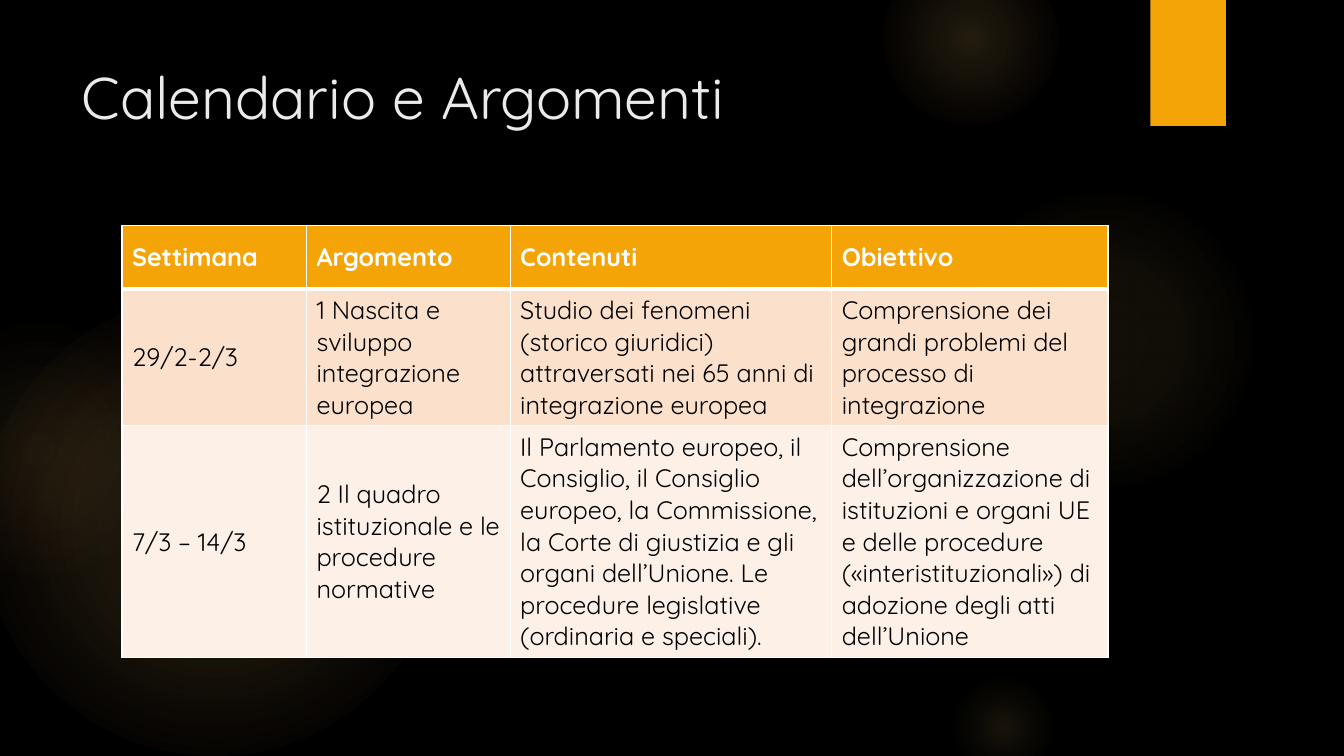
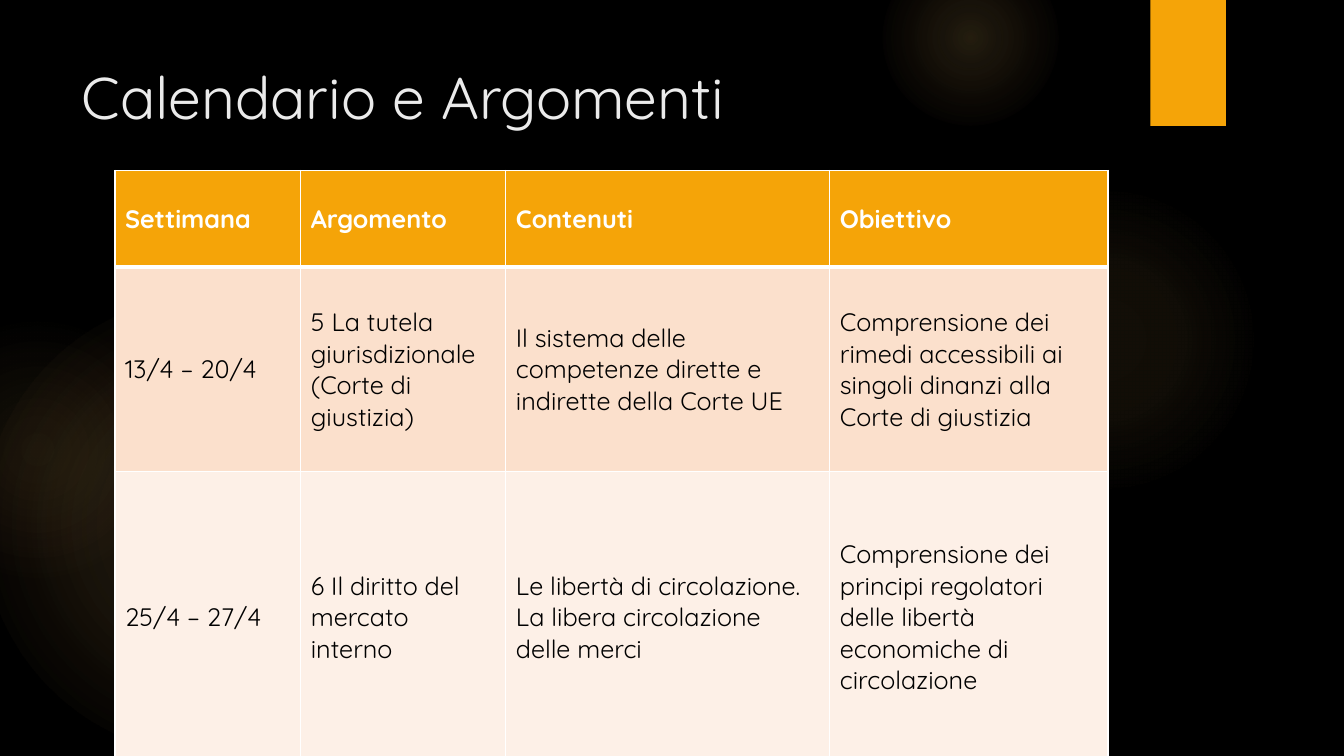
import pptx
import pptx.dml.color
import pptx.enum.shapes
import pptx.enum.text
import pptx.oxml
import pptx.oxml.ns
import pptx.util

Inches = pptx.util.Inches
ANCHOR = pptx.enum.text.MSO_ANCHOR
SHAPE = pptx.enum.shapes.MSO_SHAPE

FONT = "Quicksand"
COLORS = {
    "background": "000000",
    "accent": "F5A408",
    "glow": "FAC96A",
    "glow_edge": "F59B74",
    "title": "EBEBEB",
    "white": "FFFFFF",
    "body": "000000",
    "row_dark": "FBE0CC",
    "row_light": "FDF0E7",
}
GLOWS = [
    (-0.17, 2.92, 4.58, [(0, 11), (36, 10), (75, 0)], "glow"),
    (-0.92, 3.17, 2.58, [(0, 8), (36, 5), (71, 0)], "glow_edge"),
    (9.41, 1.83, 3.08, [(0, 7), (36, 6), (69, 0)], "glow"),
    (8.75, -0.5, 1.75, [(0, 14), (36, 7), (73, 0)], "glow"),
    (9.41, 6.67, 1.08, [(0, 10), (31, 5), (66, 0)], "glow"),
]
TITLE = "Calendario e Argomenti"
TITLE_BOX = (0.71, 0.55, 10.29, 1.53)
HEADERS = ["Settimana", "Argomento", "Contenuti", "Obiettivo"]
COLUMN_SHARES = [1.83, 2.02, 3.19, 2.74]
SCHEDULES = [
    {
        "box": (1.21, 2.24, 9.78),
        "heights": [0.63, 1.35, 2.3],
        "rows": [
            [
                "29/2-2/3",
                "1 Nascita e sviluppo integrazione europea",
                "Studio dei fenomeni (storico giuridici) attraversati nei 65 anni "
                "di integrazione europea",
                "Comprensione dei grandi problemi del processo di integrazione",
            ],
            [
                "7/3 – 14/3",
                "2 Il quadro istituzionale e le procedure normative",
                "Il Parlamento europeo, il Consiglio, il Consiglio europeo, la "
                "Commissione, la Corte di giustizia e gli organi dell’Unione. Le "
                "procedure legislative (ordinaria e speciali).",
                "Comprensione dell’organizzazione di istituzioni e organi UE e delle "
                "procedure («interistituzionali») di adozione degli atti dell’Unione",
            ],
        ],
    },
    {
        "box": (1.14, 1.69, 9.85),
        "heights": [0.96, 2.03, 2.89],
        "rows": [
            [
                "13/4 – 20/4",
                "5 La tutela giurisdizionale (Corte di giustizia)",
                "Il sistema delle competenze dirette e indirette della Corte UE",
                "Comprensione dei rimedi accessibili ai singoli dinanzi alla Corte "
                "di giustizia",
            ],
            [
                "25/4 – 27/4",
                "6 Il diritto del mercato interno",
                "Le libertà di circolazione. La libera circolazione delle merci",
                "Comprensione dei principi regolatori delle libertà economiche di "
                "circolazione",
            ],
        ],
    },
]


def rgb(name):
    return pptx.dml.color.RGBColor.from_string(COLORS[name])


def set_text(tf, text, size=18, color="body", bold=False):
    p = tf.paragraphs[0]
    p.alignment = pptx.enum.text.PP_ALIGN.LEFT
    r = p.add_run()
    r.text = text
    r.font.name = FONT
    r.font.size = pptx.util.Pt(size)
    r.font.bold = bold
    r.font.color.rgb = rgb(color)


def add_plain_shape(slide, kind, left, top, width, height):
    sp = slide.shapes.add_shape(
        kind, Inches(left), Inches(top), Inches(width), Inches(height)
    )
    sp.shadow.inherit = False
    sp.line.fill.background()
    return sp


def add_glow(slide, left, top, size, stops, edge):
    sp = add_plain_shape(slide, SHAPE.OVAL, left, top, size, size)
    sp.fill.background()
    names = ["glow", "glow", edge]
    gs = "".join(
        f'<a:gs pos="{pos * 1000}"><a:srgbClr val="{COLORS[name]}">'
        f'<a:alpha val="{alpha * 1000}"/></a:srgbClr></a:gs>'
        for (pos, alpha), name in zip(stops, names)
    )
    gradient = pptx.oxml.parse_xml(
        f'<a:gradFill {pptx.oxml.ns.nsdecls("a")}><a:gsLst>{gs}</a:gsLst>'
        '<a:path path="circle"><a:fillToRect l="50000" t="50000" r="50000" '
        'b="50000"/></a:path></a:gradFill>'
    )
    sppr = sp.element.spPr
    sppr.replace(sppr.find(pptx.oxml.ns.qn("a:noFill")), gradient)
    return sp


def decorate_layout(layout, slide):
    fill = layout.background.fill
    fill.solid()
    fill.fore_color.rgb = rgb("background")
    decor = [add_glow(slide, *glow) for glow in GLOWS]
    bar = add_plain_shape(slide, SHAPE.RECTANGLE, 11.41, 0, 0.75, 1.25)
    bar.fill.solid()
    bar.fill.fore_color.rgb = rgb("accent")
    for i, sp in enumerate(decor + [bar]):
        sp.element.nvSpPr.cNvPr.set("id", str(100 + i))
        layout.shapes.element.insert(2 + i, sp.element)


def add_title(slide, box, text):
    sp = slide.shapes.title
    sp.left, sp.top, sp.width, sp.height = map(Inches, box)
    tf = sp.text_frame
    tf.word_wrap = True
    tf.auto_size = pptx.enum.text.MSO_AUTO_SIZE.NONE
    tf.vertical_anchor = ANCHOR.TOP
    set_text(tf, text, size=42, color="title")


def set_borders(cell, top, bottom):
    tcpr = cell._tc.get_or_add_tcPr()
    for side, width in (("L", 1), ("R", 1), ("T", top), ("B", bottom)):
        tcpr.append(pptx.oxml.parse_xml(
            f'<a:ln{side} {pptx.oxml.ns.nsdecls("a")} w="{pptx.util.Pt(width)}">'
            f'<a:solidFill><a:srgbClr val="{COLORS["white"]}"/></a:solidFill>'
            f'</a:ln{side}>'
        ))


def add_schedule(slide, box, heights, rows):
    left, top, width = box
    frame = slide.shapes.add_table(
        len(rows) + 1, len(HEADERS), Inches(left), Inches(top),
        Inches(width), Inches(sum(heights)),
    )
    table = frame.table
    table.horz_banding = False
    for column, share in zip(table.columns, COLUMN_SHARES):
        column.width = Inches(width * share / sum(COLUMN_SHARES))
    for row, height in zip(table.rows, heights):
        row.height = Inches(height)
    fills = ["accent", "row_dark", "row_light"]
    for i, texts in enumerate([HEADERS] + rows):
        header = i == 0
        for j, text in enumerate(texts):
            cell = table.cell(i, j)
            set_borders(cell, 3 if i == 1 else 1, 3 if header else 1)
            cell.fill.solid()
            cell.fill.fore_color.rgb = rgb(fills[i])
            cell.vertical_anchor = ANCHOR.MIDDLE
            set_text(cell.text_frame, text, bold=header,
                     color="white" if header else "body")


def main():
    prs = pptx.Presentation()
    prs.slide_width = Inches(13.33)
    prs.slide_height = Inches(7.5)
    layout = prs.slide_layouts[5]
    slides = [prs.slides.add_slide(layout) for _ in SCHEDULES]
    decorate_layout(layout, slides[0])
    for slide, schedule in zip(slides, SCHEDULES):
        add_title(slide, TITLE_BOX, TITLE)
        add_schedule(slide, **schedule)
    prs.save("out.pptx")


if __name__ == "__main__":
    main()
